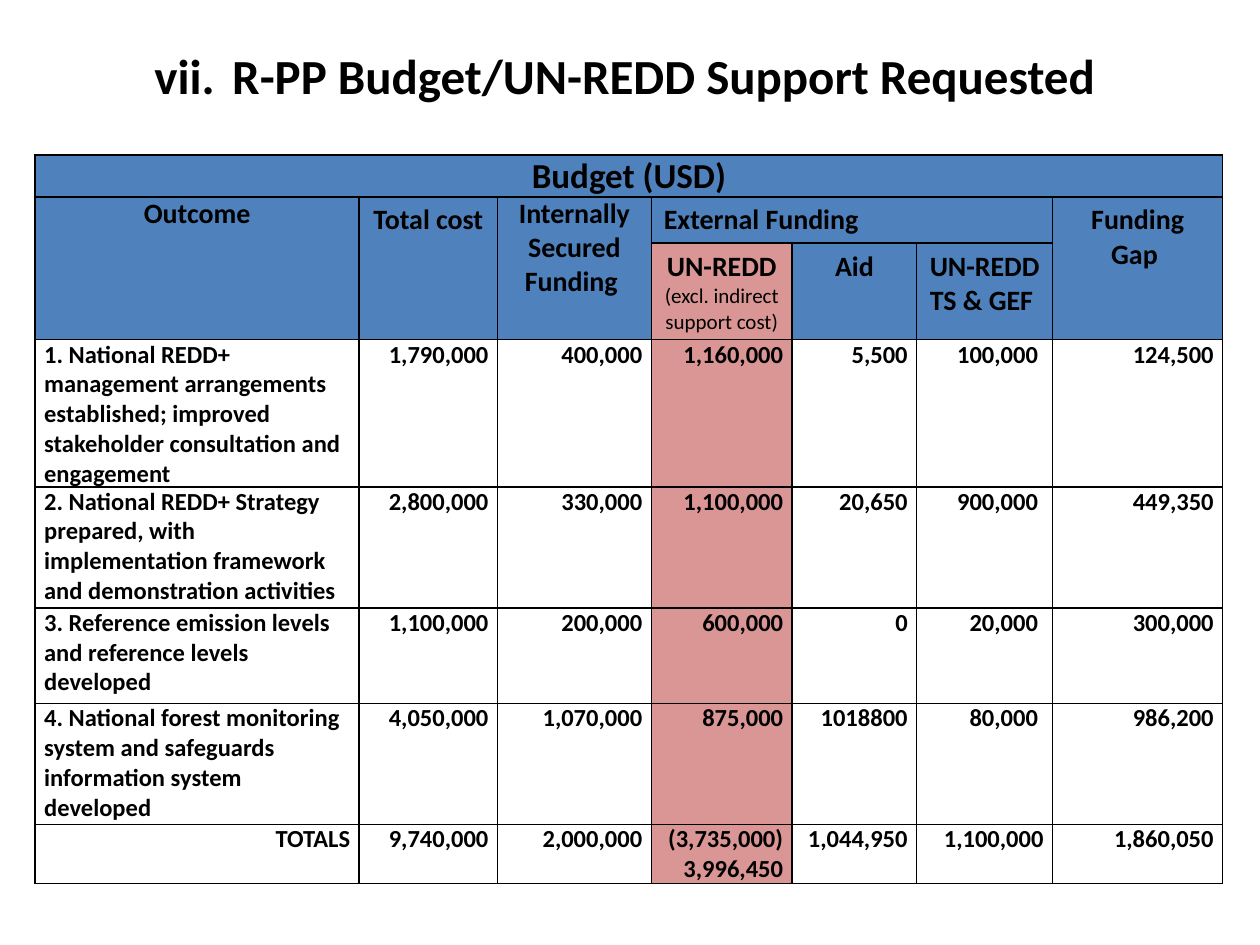
from dataclasses import dataclass

from lxml.etree import SubElement
from pptx import Presentation
from pptx.dml.color import RGBColor
from pptx.enum.text import MSO_ANCHOR, PP_ALIGN
from pptx.oxml.ns import qn
from pptx.util import Cm, Pt


@dataclass(frozen=True)
class Theme:
    """Colours, font and type sizes."""
    font: str = "Calibri"
    ink: str = "000000"
    blue: str = "4F81BD"
    rose: str = "D99694"
    title: int = 28
    band: int = 20
    head: int = 16
    body: int = 14
    note: int = 12


class Deck:
    """Holds the theme and the current slide."""

    def __init__(self, theme):
        """Open a deck with one blank slide."""
        self.theme = theme
        self.prs = Presentation()
        self.prs.slide_width, self.prs.slide_height = Cm(25.4), Cm(19.05)
        self.slide = self.prs.slides.add_slide(self.prs.slide_layouts[6])

    def text(self, para, words, size, align, bold=True):
        """Add one styled run to a paragraph."""
        para.alignment = align
        run = para.add_run()
        run.text = words
        font = run.font
        font.name, font.size, font.bold = self.theme.font, Pt(size), bold
        font.color.rgb = RGBColor.from_string(self.theme.ink)

    def title(self, words, start):
        """Add the title, numbered in roman numerals."""
        frame = self.slide.shapes.add_textbox(0, 0, Cm(25.4), Cm(3.18)).text_frame
        frame.word_wrap = True
        frame.vertical_anchor = MSO_ANCHOR.MIDDLE
        para = frame.paragraphs[0]
        para.line_spacing = 0.9
        para.space_before, para.space_after = Pt(5.6), Pt(12)
        self.text(para, words, self.theme.title, PP_ALIGN.CENTER)
        props = para._p.get_or_add_pPr()
        props.set("marL", str(Cm(1.57)))
        props.set("indent", str(-Cm(1.57)))
        SubElement(props, qn("a:buFont"), typeface="+mj-lt")
        SubElement(props, qn("a:buAutoNum"), type="romanLcPeriod", startAt=str(start))

    def table(self, left, top, cols, rows):
        """Add a bordered table with the given column and row sizes in cm."""
        grid = self.slide.shapes.add_table(
            len(rows), len(cols), Cm(left), Cm(top), Cm(sum(cols)), Cm(sum(rows))).table
        for col, width in zip(grid.columns, cols):
            col.width = Cm(width)
        for row, height in zip(grid.rows, rows):
            row.height = Cm(height)
        for cell in grid.iter_cells():
            self.border(cell)
            cell.fill.background()
        return grid

    def border(self, cell):
        """Draw all four sides of a cell."""
        props = cell._tc.get_or_add_tcPr()
        for side in ("lnL", "lnR", "lnT", "lnB"):
            line = SubElement(props, qn(f"a:{side}"), w=str(Pt(1)))
            fill = SubElement(line, qn("a:solidFill"))
            SubElement(fill, qn("a:srgbClr"), val=self.theme.ink)

    def cell(self, cell, lines, size, align, fill=None, tight=True):
        """Fill a cell with its lines of text."""
        if fill:
            cell.fill.solid()
            cell.fill.fore_color.rgb = RGBColor.from_string(fill)
        if tight:
            cell.margin_left = cell.margin_right = Cm(0.18)
            cell.margin_top = cell.margin_bottom = 0
        frame = cell.text_frame
        for i, words in enumerate(lines):
            para = frame.add_paragraph() if i else frame.paragraphs[0]
            note = words.startswith("(excl.")
            self.text(para, words, self.theme.note if note else size, align, not note)


COLS = [6.53, 2.79, 3.1, 2.84, 2.51, 2.74, 3.43]
ROWS = [0.74, 0.84, 0.91, 2.9, 2.44, 1.93, 2.44, 1.19]
HEADS = [
    (1, 0, 2, 1, ["Outcome"], True),
    (1, 1, 2, 1, ["Total cost"], False),
    (1, 2, 2, 1, ["Internally Secured Funding "], True),
    (1, 3, 1, 3, ["External Funding"], False),
    (1, 6, 2, 1, ["Funding Gap "], False),
    (2, 3, 1, 1, ["UN-REDD", "(excl. indirect support cost)"], False),
    (2, 4, 1, 1, ["Aid"], False),
    (2, 5, 1, 1, ["UN-REDD", "TS & GEF "], False),
]
BODY = [
    ["1. National REDD+ management arrangements established; improved "
     "stakeholder consultation and engagement",
     "1,790,000", "400,000", "1,160,000", "5,500", "100,000 ", "124,500"],
    ["2. National REDD+ Strategy prepared, with implementation framework "
     "and demonstration activities",
     "2,800,000", "330,000", "1,100,000", "20,650", "900,000 ", "449,350"],
    ["3. Reference emission levels and reference levels developed",
     "1,100,000", "200,000", "600,000", "0", "20,000 ", "300,000"],
    ["4. National forest monitoring system and safeguards information "
     "system developed",
     "4,050,000", "1,070,000", "875,000", "1018800", "80,000 ", "986,200"],
    ["TOTALS", "9,740,000", "2,000,000", "(3,735,000)\n3,996,450",
     "1,044,950", "1,100,000", "1,860,050"],
]


def main():
    """Build and save the budget slide."""
    theme = Theme()
    deck = Deck(theme)
    deck.title("R-PP Budget/UN-REDD Support Requested ", 7)
    grid = deck.table(0.71, 3.12, COLS, ROWS)

    grid.cell(0, 0).merge(grid.cell(0, len(COLS) - 1))
    deck.cell(grid.cell(0, 0), ["Budget (USD)"], theme.band, PP_ALIGN.CENTER, theme.blue)
    for row, col, high, wide, lines, tight in HEADS:
        cell = grid.cell(row, col)
        if high * wide > 1:
            cell.merge(grid.cell(row + high - 1, col + wide - 1))
        align = PP_ALIGN.LEFT if wide > 1 else PP_ALIGN.CENTER
        fill = theme.rose if (row, col) == (2, 3) else theme.blue
        deck.cell(cell, lines, theme.head, align, fill, tight)

    for row, texts in enumerate(BODY, 3):
        for col, words in enumerate(texts):
            left = col == 0 and words != "TOTALS"
            align = PP_ALIGN.LEFT if left else PP_ALIGN.RIGHT
            fill = theme.rose if col == 3 else None
            deck.cell(grid.cell(row, col), words.split("\n"), theme.body, align, fill)
    deck.prs.save("out.pptx")


if __name__ == "__main__":
    main()
